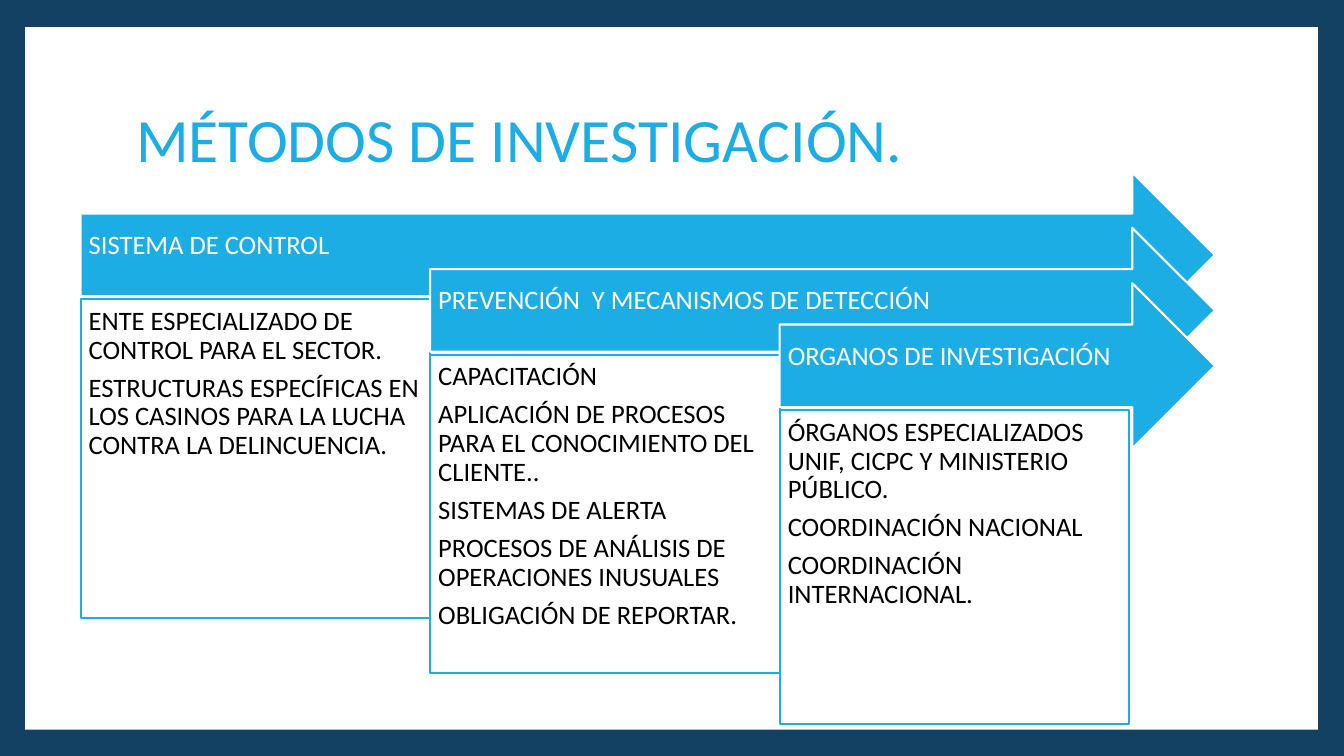
from dataclasses import dataclass

from pptx import Presentation
from pptx.dml.color import RGBColor as Rgb
from pptx.enum.shapes import MSO_SHAPE as Kind
from pptx.enum.text import MSO_ANCHOR as Anchor, MSO_AUTO_SIZE as Fit, PP_ALIGN as Align
from pptx.util import Inches, Pt

WIDE, HIGH = 13.33, 7.5
BLUE, NAVY, WHITE, BLACK = "1CADE4", "134163", "FFFFFF", "000000"
FONT = "Calibri"

# Staircase grid: three columns, one row down per step
LEFT, TOP, TIP = 0.8, 1.71, 12.05
COL, ROW = 10.4 / 3, 0.55
ARROW, DROP = 1.64, 1.26  # arrow height, arrow top to panel top
PAD = 0.08


@dataclass
class Stage:
    head: str
    items: list[str]
    tall: float = 3.16


STAGES = [
    Stage("SISTEMA DE CONTROL", [
        "ENTE ESPECIALIZADO DE CONTROL PARA EL SECTOR.",
        "ESTRUCTURAS ESPECÍFICAS EN LOS CASINOS PARA LA LUCHA CONTRA LA DELINCUENCIA.",
    ]),
    Stage("PREVENCIÓN  Y MECANISMOS DE DETECCIÓN", [
        "CAPACITACIÓN",
        "APLICACIÓN DE PROCESOS PARA EL CONOCIMIENTO DEL CLIENTE..",
        "SISTEMAS DE ALERTA",
        "PROCESOS DE ANÁLISIS DE OPERACIONES INUSUALES",
        "OBLIGACIÓN DE REPORTAR.",
    ]),
    Stage("ORGANOS DE INVESTIGACIÓN", [
        "ÓRGANOS ESPECIALIZADOS UNIF, CICPC Y MINISTERIO PÚBLICO.",
        "COORDINACIÓN NACIONAL",
        "COORDINACIÓN INTERNACIONAL.",
    ], 3.11),
]


def paint(part, tone: str) -> None:
    """Give a fill, a line's fill or a font's fill one solid colour."""
    part.solid()
    part.fore_color.rgb = Rgb.from_string(tone)


def draw(slide, kind, x: float, y: float, w: float, h: float, tone: str, edge: str = ""):
    shape = slide.shapes.add_shape(kind, Inches(x), Inches(y), Inches(w), Inches(h))
    shape.shadow.inherit = False
    paint(shape.fill, tone)
    if edge:
        paint(shape.line.fill, edge)
        shape.line.width = Pt(1.5)
    else:
        shape.line.fill.background()
    return shape


def write(frame, texts: list[str], size: float, tone: str, anchor, after: float = 0) -> None:
    frame.word_wrap = True
    frame.auto_size = Fit.NONE
    frame.vertical_anchor = anchor
    for i, text in enumerate(texts):
        para = frame.add_paragraph() if i else frame.paragraphs[0]
        para.alignment = Align.LEFT
        para.line_spacing = 0.9
        para.space_after = Pt(after)
        run = para.add_run()
        run.text = text
        run.font.name = FONT
        run.font.size = Pt(size)
        paint(run.font.fill, tone)


def inset(frame, right: float = PAD, low: float = PAD) -> None:
    frame.margin_left = frame.margin_top = Inches(PAD)
    frame.margin_right, frame.margin_bottom = Inches(right), Inches(low)


def step(slide, i: int, stage: Stage) -> None:
    x, y = LEFT + i * COL, TOP + i * ROW
    # Arrow with the heading
    arrow = draw(slide, Kind.RIGHT_ARROW, x, y, TIP - x, ARROW, BLUE, WHITE)
    inset(arrow.text_frame, 0.28, 0.26)
    write(arrow.text_frame, [stage.head], 19, WHITE, Anchor.MIDDLE, 6.65)
    # Panel with the details
    panel = draw(slide, Kind.RECTANGLE, x, y + DROP, COL, stage.tall, WHITE, BLUE)
    inset(panel.text_frame)
    write(panel.text_frame, stage.items, 19, BLACK, Anchor.TOP, 6.65)


def main() -> None:
    deck = Presentation()
    deck.slide_width, deck.slide_height = Inches(WIDE), Inches(HIGH)
    slide = deck.slides.add_slide(deck.slide_layouts[5])

    # Navy frame around a white sheet
    paint(slide.background.fill, NAVY)
    sheet = draw(slide, Kind.RECTANGLE, 0.25, 0.27, 12.82, 6.97, WHITE)
    title = slide.shapes.title
    title.element.addprevious(sheet.element)

    # Title
    title.left, title.top = Inches(1.25), Inches(0.67)
    title.width, title.height = Inches(10.8), Inches(1.48)
    write(title.text_frame, ["MÉTODOS DE INVESTIGACIÓN."], 44, BLUE, Anchor.MIDDLE)

    # Steps, back to front
    for i, stage in enumerate(STAGES):
        step(slide, i, stage)

    deck.save("out.pptx")


if __name__ == "__main__":
    main()
